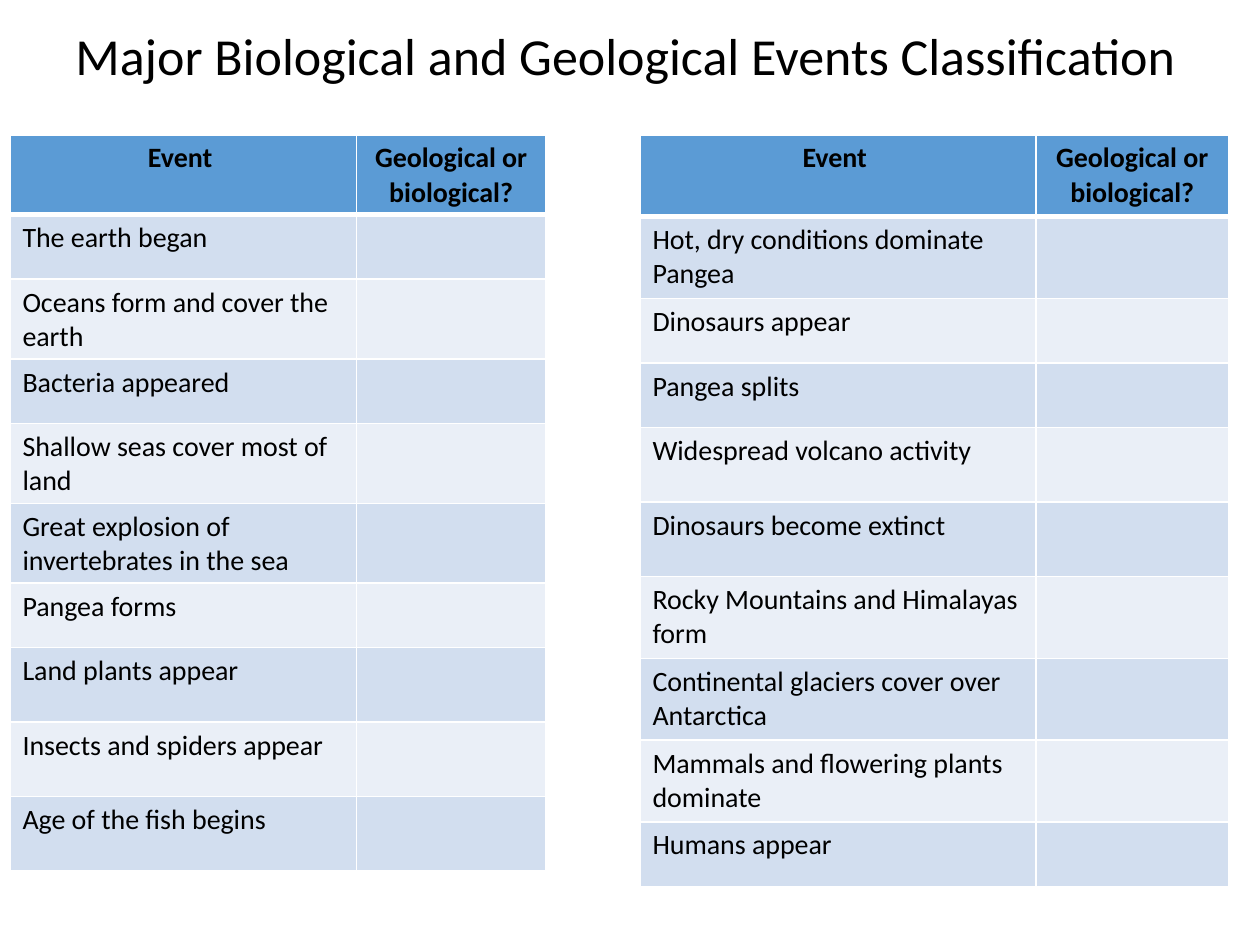
from lxml.etree import SubElement
from pptx import Presentation
from pptx.dml.color import RGBColor
from pptx.enum.text import MSO_ANCHOR, PP_ALIGN
from pptx.oxml.ns import qn
from pptx.util import Cm, Pt

TITLE = "Major Biological and Geological Events Classification"
HEADINGS = ["Event ", "Geological or biological?"]
SHORT, MEDIUM, TALL = 1.3, 1.5, 1.65  # row heights in cm

# Each row is an event and its height; the answer column stays empty.
TABLES = [
    {
        "left": 0.2,
        "columns": [6.99, 3.81],
        "header_height": MEDIUM,
        "events": [
            ("The earth began", SHORT),
            ("Oceans form and cover the earth", SHORT),
            ("Bacteria appeared", SHORT),
            ("Shallow seas cover most of land", SHORT),
            ("Great explosion of invertebrates in the sea", MEDIUM),
            ("Pangea forms", SHORT),
            ("Land plants appear", MEDIUM),
            ("Insects and spiders appear", MEDIUM),
            ("Age of the fish begins", MEDIUM),
        ],
    },
    {
        "left": 12.9,
        "columns": [7.98, 3.89],
        "header_height": TALL,
        "events": [
            ("Hot, dry conditions dominate Pangea", TALL),
            ("Dinosaurs appear", SHORT),
            ("Pangea splits", SHORT),
            ("Widespread volcano activity", MEDIUM),
            ("Dinosaurs become extinct", MEDIUM),
            ("Rocky Mountains and Himalayas form", TALL),
            ("Continental glaciers cover over Antarctica", TALL),
            ("Mammals and flowering plants dominate", TALL),
            ("Humans appear", SHORT),
        ],
    },
]
TABLE_TOP, TABLE_HEIGHT = Cm(2.72), Cm(15.14)

FONT = "Calibri"
BLACK = RGBColor(0x00, 0x00, 0x00)
WHITE = RGBColor(0xFF, 0xFF, 0xFF)
HEADER_BLUE = RGBColor(0x5B, 0x9B, 0xD5)
BANDS = [RGBColor(0xEA, 0xEF, 0xF7), RGBColor(0xD2, 0xDE, 0xEF)]


def write_text(text_frame, text, size=16, bold=False, align=PP_ALIGN.LEFT, spacing=None):
    paragraph = text_frame.paragraphs[0]
    paragraph.alignment = align
    paragraph.line_spacing = spacing
    paragraph.font.size = Pt(size)
    if text:
        run = paragraph.add_run()
        run.text = text
        run.font.name = FONT
        run.font.size = Pt(size)
        run.font.bold = bold
        run.font.color.rgb = BLACK


def set_borders(cell, top=1, bottom=1):
    """Draw white borders, widths in points; call before the fill is set."""
    properties = cell._tc.get_or_add_tcPr()
    for side, width in (("L", 1), ("R", 1), ("T", top), ("B", bottom)):
        line = SubElement(properties, qn(f"a:ln{side}"), w=str(Pt(width)))
        fill = SubElement(line, qn("a:solidFill"))
        SubElement(fill, qn("a:srgbClr"), val=str(WHITE))


def add_event_table(slide, left, columns, header_height, events):
    rows = [(HEADINGS, header_height)]
    rows += [([event, ""], height) for event, height in events]
    shape = slide.shapes.add_table(
        len(rows), len(columns), Cm(left), TABLE_TOP, Cm(sum(columns)), TABLE_HEIGHT
    )
    table = shape.table
    for column, width in zip(table.columns, columns):
        column.width = Cm(width)
    for row_index, (texts, height) in enumerate(rows):
        table.rows[row_index].height = Cm(height)
        is_header = row_index == 0
        for cell, text in zip(table.rows[row_index].cells, texts):
            set_borders(cell, top=3 if row_index == 1 else 1, bottom=3 if is_header else 1)
            cell.fill.solid()
            cell.fill.fore_color.rgb = HEADER_BLUE if is_header else BANDS[row_index % 2]
            write_text(
                cell.text_frame,
                text,
                bold=is_header,
                align=PP_ALIGN.CENTER if is_header else PP_ALIGN.LEFT,
            )
    shape.height = TABLE_HEIGHT  # rows stretch to fill the frame


def main():
    presentation = Presentation()
    presentation.slide_width, presentation.slide_height = Cm(25.4), Cm(19.05)
    slide = presentation.slides.add_slide(presentation.slide_layouts[6])

    title = slide.shapes.add_textbox(Cm(1.27), Cm(0), Cm(23.29), Cm(2.36))
    title.text_frame.word_wrap = True
    title.text_frame.vertical_anchor = MSO_ANCHOR.MIDDLE
    write_text(title.text_frame, TITLE, size=29.7, spacing=0.9)

    for table in TABLES:
        add_event_table(slide, **table)
    presentation.save("out.pptx")


if __name__ == "__main__":
    main()
